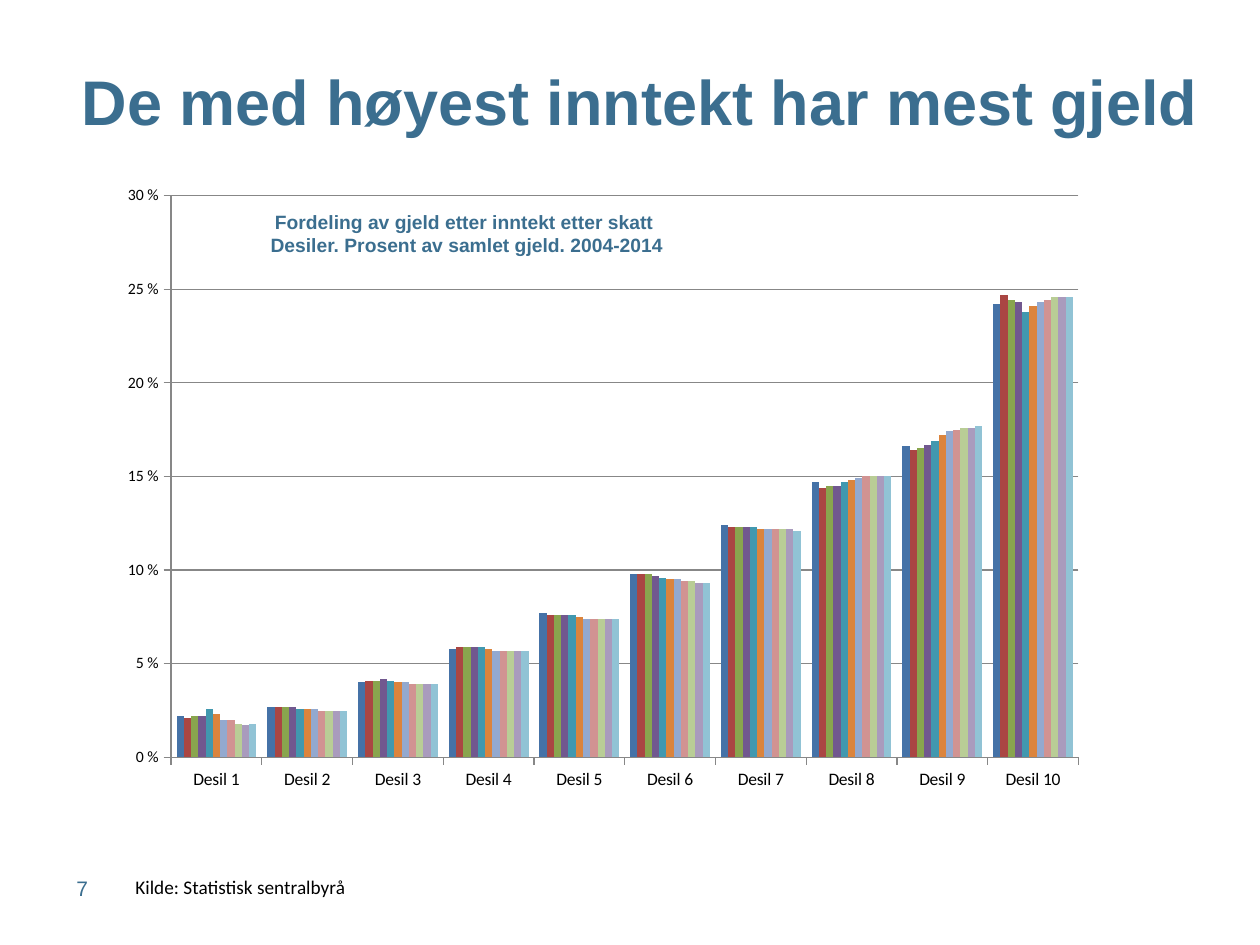
from dataclasses import dataclass

from lxml import etree
from pptx import Presentation
from pptx.chart.data import CategoryChartData
from pptx.dml.color import RGBColor
from pptx.enum.chart import XL_CHART_TYPE, XL_TICK_MARK
from pptx.enum.text import MSO_ANCHOR, PP_ALIGN
from pptx.util import Emu, Pt

COLUMNS = XL_CHART_TYPE.COLUMN_CLUSTERED
TICK_OUTSIDE = XL_TICK_MARK.OUTSIDE
TOP, MIDDLE = MSO_ANCHOR.TOP, MSO_ANCHOR.MIDDLE
LEFT, CENTER = PP_ALIGN.LEFT, PP_ALIGN.CENTER
PX = 914400 / 126
CHART_NS = "http://schemas.openxmlformats.org/drawingml/2006/chart"

PLOT_AREA = {"x": 0.049, "y": 0.017, "w": 0.923, "h": 0.899}
# One row per decile, one value per year from 2004 to 2014, in tenths of a percent
DEBT_SHARES = [
    [22, 21, 22, 22, 26, 23, 20, 20, 18, 17, 18],
    [27, 27, 27, 27, 26, 26, 26, 25, 25, 25, 25],
    [40, 41, 41, 42, 41, 40, 40, 39, 39, 39, 39],
    [58, 59, 59, 59, 59, 58, 57, 57, 57, 57, 57],
    [77, 76, 76, 76, 76, 75, 74, 74, 74, 74, 74],
    [98, 98, 98, 97, 96, 95, 95, 94, 94, 93, 93],
    [124, 123, 123, 123, 123, 122, 122, 122, 122, 122, 121],
    [147, 144, 145, 145, 147, 148, 149, 150, 150, 150, 150],
    [166, 164, 165, 167, 169, 172, 174, 175, 176, 176, 177],
    [242, 247, 244, 243, 238, 241, 243, 244, 246, 246, 246],
]


@dataclass(frozen=True)
class Theme:
    heading_font: str = "Arial"
    body_font: str = "Calibri"
    accent: str = "3B6E8F"
    ink: str = "000000"
    grid: str = "878787"
    bars: tuple = ("4572A7", "AA4643", "89A54E", "71588F", "4198AF", "DB843D",
                   "93A9CF", "D19392", "B9CD96", "A99BBD", "91C3D5")
    title_size: float = 36
    number_size: float = 12
    label_size: float = 11
    category_size: float = 10
    value_size: float = 9


def px(*lengths):
    return [Emu(round(length * PX)) for length in lengths]


def style_font(font, name, size, color, bold=False):
    font.name, font.size, font.bold = name, Pt(size), bold
    font.color.rgb = RGBColor.from_string(color)


class SlideBuilder:
    def __init__(self, slide, theme):
        self.slide, self.theme = slide, theme

    def text(self, at, lines, font, size, color, bold=False,
             align=LEFT, anchor=TOP, wrap=True):
        frame = self.slide.shapes.add_textbox(*px(*at)).text_frame
        frame.word_wrap = wrap
        frame.vertical_anchor = anchor
        for index, line in enumerate(lines):
            para = frame.add_paragraph() if index else frame.paragraphs[0]
            para.alignment = align
            span = para.add_run()
            span.text = line
            style_font(span.font, font, size, color, bold)

    def column_chart(self, at, rows):
        theme = self.theme
        data = CategoryChartData(number_format="0\\ %")
        data.categories = [f"Desil {n}" for n in range(1, len(rows) + 1)]
        for number, values in enumerate(zip(*rows), 1):
            data.add_series(f"Series {number}", [v / 1000 for v in values])
        chart = self.slide.shapes.add_chart(COLUMNS, *px(*at), data).chart
        chart.has_legend = chart.has_title = False
        style_font(chart.font, theme.body_font, theme.category_size, theme.ink)

        plot = chart.plots[0]
        plot.vary_by_categories = False
        plot.gap_width, plot.overlap = 150, 0
        for series, color in zip(plot.series, theme.bars):
            series.format.fill.solid()
            series.format.fill.fore_color.rgb = RGBColor.from_string(color)

        category_axis, value_axis = chart.category_axis, chart.value_axis
        value_axis.minimum_scale, value_axis.maximum_scale = 0, 0.3
        value_axis.major_unit = 0.05
        value_axis.has_major_gridlines = True
        labels = value_axis.tick_labels
        labels.number_format, labels.number_format_is_linked = "0\\ %", False
        for axis, size in ((category_axis, theme.category_size),
                           (value_axis, theme.value_size)):
            axis.major_tick_mark = TICK_OUTSIDE
            style_font(axis.tick_labels.font, theme.body_font, size, theme.ink)
            self.rule(axis.format.line)
        self.rule(value_axis.major_gridlines.format.line)
        self.place_plot(chart)

    def rule(self, line):
        line.color.rgb = RGBColor.from_string(self.theme.grid)
        line.width = Pt(0.75)

    def place_plot(self, chart):
        """Fix the inner plot area as fractions of the chart."""
        def add(parent, tag, value=None):
            child = etree.SubElement(parent, f"{{{CHART_NS}}}{tag}")
            if value is not None:
                child.set("val", str(value))
            return child

        area = chart.plots[0]._element.getparent()
        for old in area.findall(f"{{{CHART_NS}}}layout"):
            area.remove(old)
        layout = add(area, "layout")
        area.insert(0, layout)
        manual = add(layout, "manualLayout")
        add(manual, "layoutTarget", "inner")
        add(manual, "xMode", "edge")
        add(manual, "yMode", "edge")
        for key, fraction in PLOT_AREA.items():
            add(manual, key, fraction)


def main():
    deck = Presentation()
    deck.slide_width, deck.slide_height = px(1260, 945)
    theme = Theme()
    page = SlideBuilder(deck.slides.add_slide(deck.slide_layouts[6]), theme)

    page.column_chart((123, 185, 983, 625), DEBT_SHARES)
    page.text((64, 869, 294, 50), ["7"],
              theme.heading_font, theme.number_size, theme.accent)
    page.text((44, 45, 1192, 110), ["De med høyest inntekt har mest gjeld"],
              theme.heading_font, theme.title_size, theme.accent,
              bold=True, align=CENTER, anchor=MIDDLE)
    page.text((194, 204, 546, 59),
              ["Fordeling av gjeld etter inntekt etter skatt ",
               "Desiler. Prosent av samlet gjeld. 2004-2014"],
              theme.heading_font, theme.label_size, theme.accent,
              bold=True, align=CENTER)
    page.text((123, 869, 238, 37), ["Kilde: Statistisk sentralbyrå"],
              theme.body_font, theme.label_size, theme.ink, wrap=False)
    deck.save("out.pptx")


if __name__ == "__main__":
    main()
